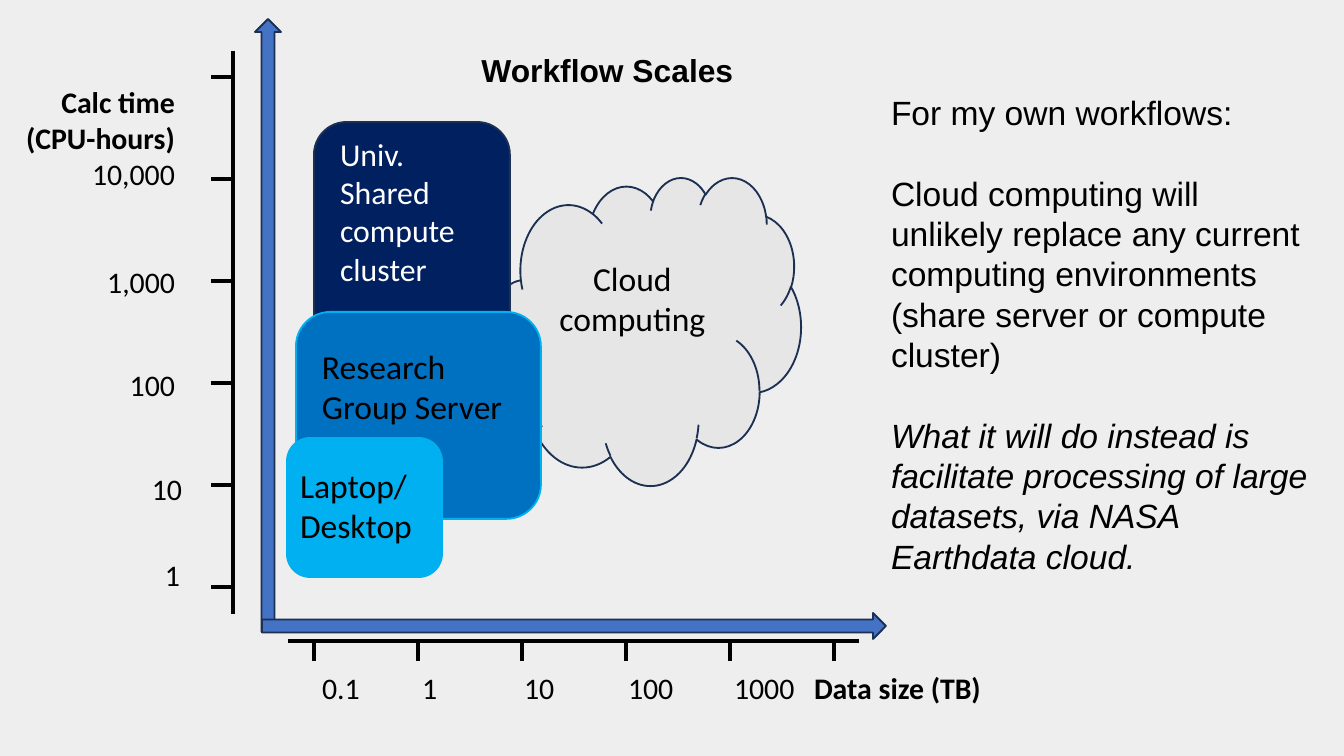
from lxml import etree
from pptx import Presentation
from pptx import util as u
from pptx.dml.color import RGBColor
from pptx.enum import shapes, text
from pptx.oxml.ns import qn

PX = 914400 / 134.4  # EMU in one px

BACKGROUND = RGBColor(0xEE, 0xEE, 0xEE)
BLACK = RGBColor(0x00, 0x00, 0x00)
WHITE = RGBColor(0xFF, 0xFF, 0xFF)
OUTLINE = RGBColor(0x1C, 0x30, 0x52)
CLOUD_GREY = RGBColor(0xE7, 0xE6, 0xE6)
NAVY = RGBColor(0x00, 0x20, 0x60)
BLUE = RGBColor(0x00, 0x70, 0xC0)
SKY = RGBColor(0x00, 0xB0, 0xF0)
ARROW_BLUE = RGBColor(0x44, 0x72, 0xC4)

KIND = shapes.MSO_SHAPE
LEFT, CENTER, RIGHT = text.PP_ALIGN.LEFT, text.PP_ALIGN.CENTER, text.PP_ALIGN.RIGHT

# Content: kind, box (left, top, width, height), fill, line, rotation
REGIONS = [
    (KIND.CLOUD, (493, 177, 308, 308), CLOUD_GREY, OUTLINE, 0),
    (KIND.ROUNDED_RECTANGLE, (314, 122, 196, 227), NAVY, OUTLINE, 0),
    (KIND.ROUNDED_RECTANGLE, (296, 312, 245, 207), BLUE, SKY, 0),
    (KIND.ROUNDED_RECTANGLE, (287, 438, 155, 139), SKY, SKY, 0),
]
AXIS_ARROWS = [
    (KIND.UP_ARROW, (255, 19, 26, 613), ARROW_BLUE, OUTLINE, 0),
    (KIND.UP_ARROW, (561, 314, 26, 624), ARROW_BLUE, OUTLINE, 90),
]

# box, size, alignment, colour, paragraphs
REGION_LABELS = [
    ((287, 458, 155, 95), 18, LEFT, BLACK, ["Laptop/ Desktop"]),
    ((309, 339, 222, 95), 18, LEFT, BLACK, ["Research", "Group Server"]),
    ((327, 128, 155, 168), 17, LEFT, WHITE, ["Univ. Shared compute cluster"]),
    ((531, 251, 203, 126), 18, CENTER, BLACK, ["Cloud computing"]),
]
TIME_TITLE = ["Calc time", "(CPU-hours)"]
TIME_TITLE_BOX = (3, 77, 185, 122)
TIME_TOP_LABEL = "10,000"
TIME_LABELS = [  # text, right edge, top
    ("1,000", 188, 257), ("100", 188, 360), ("10", 195, 464), ("1", 193, 550),
]
DATA_LABELS = ["0.1", "1", "10", "100", "1000"]
DATA_TITLE = "Data size (TB)"
DATA_TABS = [100, 202, 306, 412, 492]
DATA_BOX = (309, 663, 845, 50)

HEADING = "Workflow Scales"
COMMENTS = [  # text, italic
    ("For my own workflows:", False),
    ("Cloud computing will unlikely replace any current computing environments "
     "(share server or compute cluster)", False),
    ("What it will do instead is facilitate processing of large datasets, "
     "via NASA Earthdata cloud.", True),
]
COMMENT_LEADING = u.Pt(21.6)

# Axis rulers
TICKS = 6
TIME_X, TIME_SPAN, TIME_FIRST, TIME_STEP, TIME_TICK_END = 233, (51, 614), 77, 102, 211
DATA_Y, DATA_SPAN, DATA_FIRST, DATA_STEP, DATA_TICK_END = 641, (288, 859), 314, 104, 661


def px(*lengths):
    return [u.Emu(round(length * PX)) for length in lengths]


def add_area(kind, box, fill, line, rotation):
    area = slide.shapes.add_shape(kind, *px(*box))
    area.shadow.inherit = False
    area.fill.solid()
    area.fill.fore_color.rgb = fill
    area.line.color.rgb = line
    area.line.width = u.Pt(1)
    area.rotation = rotation


def add_rule(*ends):
    rule = slide.shapes.add_connector(shapes.MSO_CONNECTOR.STRAIGHT, *px(*ends))
    rule.line.color.rgb = BLACK
    rule.line.width = u.Pt(2)
    etree.SubElement(rule._element.spPr, qn("a:effectLst"))


def add_frame(box, inset_y=7):
    frame = slide.shapes.add_textbox(*px(*box)).text_frame
    frame.word_wrap = True
    frame.margin_left, frame.margin_right = px(13, 13)
    frame.margin_top, frame.margin_bottom = px(inset_y, inset_y)
    return frame


def add_paragraph(frame, first, align=LEFT):
    paragraph = frame.paragraphs[0] if first else frame.add_paragraph()
    paragraph.alignment = align
    return paragraph


def add_run(paragraph, words, size=16, font="Calibri", color=BLACK, bold=False, italic=False):
    run = paragraph.add_run()
    run.text = words
    run.font.size = u.Pt(size)
    run.font.name = font
    run.font.color.rgb = color
    run.font.bold = bold
    run.font.italic = italic


deck = Presentation()
deck.slide_width, deck.slide_height = px(1344, 756)
slide = deck.slides.add_slide(deck.slide_layouts[6])
slide.background.fill.solid()
slide.background.fill.fore_color.rgb = BACKGROUND

# Computing regions and axis arrows
for area in REGIONS + AXIS_ARROWS:
    add_area(*area)

# Rulers with ticks
add_rule(TIME_X, TIME_SPAN[0], TIME_X, TIME_SPAN[1])
add_rule(DATA_SPAN[0], DATA_Y, DATA_SPAN[1], DATA_Y)
for i in range(TICKS):
    y = TIME_FIRST + i * TIME_STEP
    add_rule(TIME_X, y, TIME_TICK_END, y)
    x = DATA_FIRST + i * DATA_STEP
    add_rule(x, DATA_Y, x, DATA_TICK_END)

# Calculation time labels
time_frame = add_frame(TIME_TITLE_BOX)
for i, words in enumerate(TIME_TITLE + [TIME_TOP_LABEL]):
    add_run(add_paragraph(time_frame, i == 0, RIGHT), words, bold=words in TIME_TITLE)
for words, right, top in TIME_LABELS:
    add_run(add_paragraph(add_frame((right - 108, top, 108, 50)), True, RIGHT), words)

# Data size labels, set on tab stops
data_row = add_paragraph(add_frame(DATA_BOX), True)
tab_list = etree.SubElement(data_row._p.get_or_add_pPr(), qn("a:tabLst"))
for stop in px(*DATA_TABS):
    etree.SubElement(tab_list, qn("a:tab"), pos=str(int(stop)), algn="l")
add_run(data_row, "\t".join(DATA_LABELS) + "\t")
add_run(data_row, DATA_TITLE, bold=True)

# Region labels
for box, size, align, color, lines in REGION_LABELS:
    label_frame = add_frame(box)
    for i, words in enumerate(lines):
        add_run(add_paragraph(label_frame, i == 0, align), words, size, color=color)

# Comments and heading
comment_frame = add_frame((878, 79, 446, 516), 13)
for i, (words, italic) in enumerate(COMMENTS):
    comment = add_paragraph(comment_frame, i == 0)
    comment.line_spacing = COMMENT_LEADING
    if i:
        comment.space_before = COMMENT_LEADING
    add_run(comment, words, 18, "Arial", italic=italic)
heading = add_paragraph(add_frame((395, 38, 425, 66), 13), True, CENTER)
add_run(heading, HEADING, 17, "Arial", bold=True)

deck.save("out.pptx")
